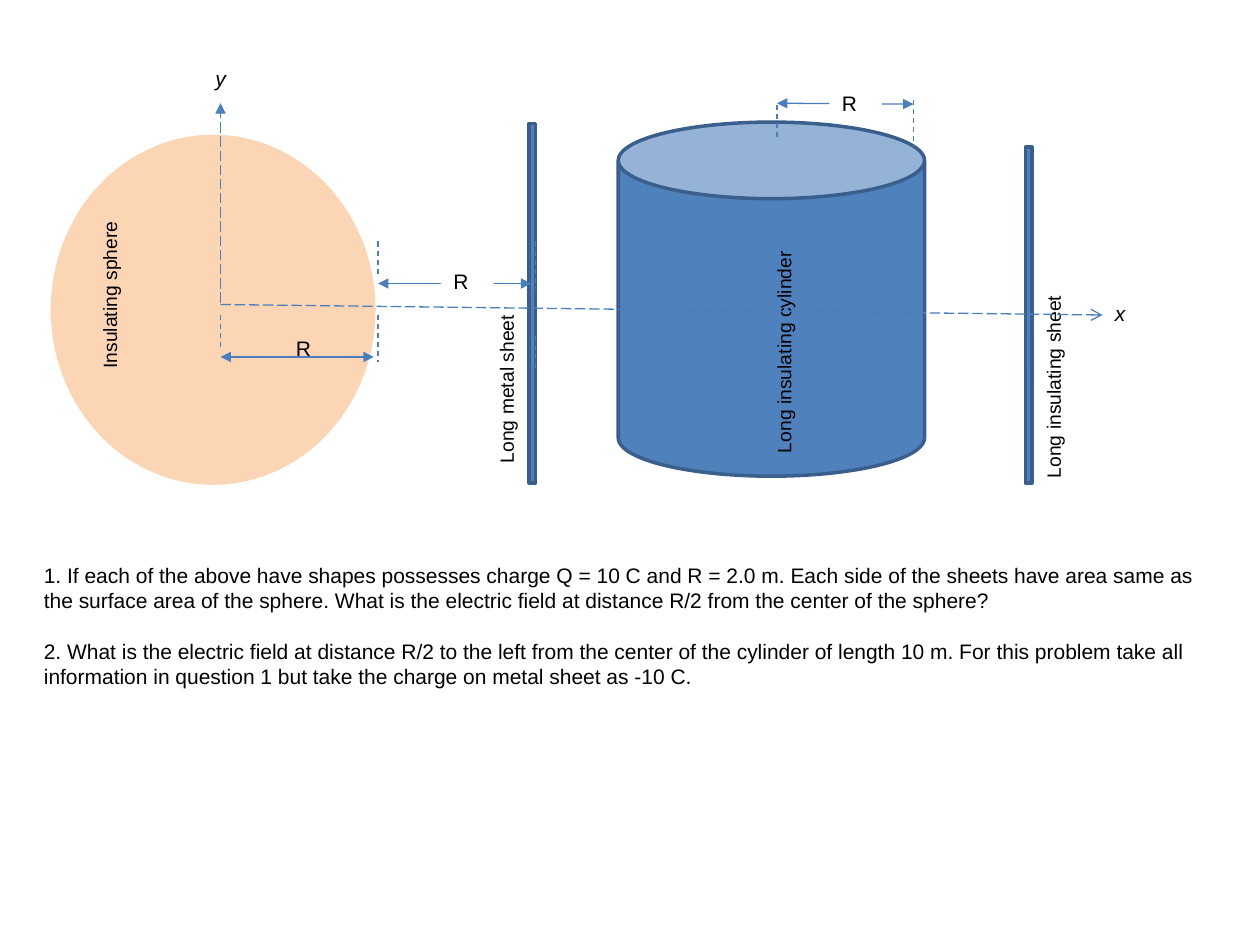
from lxml import etree
from pptx import Presentation
from pptx.dml.color import RGBColor
from pptx.enum import dml, shapes, text
from pptx.oxml import ns
from pptx.util import Pt

THEME = {
    "font": "Arial", "body": 12, "label": 11,
    "text": "000000", "paper": "FFFFFF",
    "blue": "4F81BD", "edge": "3A5F8C", "line": "4B7EBC", "sphere": "FCD5B5",
    "edge_width": 2, "line_width": 0.75,
}
SHAPE = shapes.MSO_SHAPE
DASH = dml.MSO_LINE

# Content: all lengths in points
QUESTIONS = [
    "1. If each of the above have shapes possesses charge Q = 10 C and R = 2.0 m. "
    "Each side of the sheets have area same as the surface area of the sphere. "
    "What is the electric field at distance R/2 from the center of the sphere?",
    "2. What is the electric field at distance R/2 to the left from the center of the "
    "cylinder of length 10 m. For this problem take all information in question 1 "
    "but take the charge on metal sheet as -10 C.",
]
QUESTION_BOX = (18, 318, 684, 80)
QUESTION_GAP = 14.5

# preset, box, fill, edge
BODIES = [
    (SHAPE.RECTANGLE, (302.4, 70.5, 3.6, 205.5), "blue", "edge"),
    (SHAPE.RECTANGLE, (586, 84, 3.6, 192), "blue", "edge"),
    (SHAPE.CAN, (353.3, 69.8, 175, 202.3), "blue", "edge"),
    (SHAPE.OVAL, (30, 78, 183.6, 198), "sphere", "sphere"),
]

# Guide pairs: left x, left top, right x, right top
GUIDES = [
    (306, 192, 396, 192),
    (444, 60, 522, 57),
    (498, 192, 588, 192),
    (126, 180, 216, 180),
    (216, 138, 306, 138),
]
LEFT_GUIDE, RIGHT_GUIDE = 20, 27

# Radius dimensions: start, end, label box, label fill
RADII = [
    ((444, 59), (522, 59.5), (474, 48, 30, 21.8), "paper"),
    ((126, 204), (213.6, 204), (162, 188, 30, 21.8), None),
    ((216, 162), (303.6, 162), (252, 150, 30, 21.8), "paper"),
]

# Axes: start, end, arrowhead, name, name box
AXES = [
    ((126, 174), (630, 180), "arrow", "x", (630, 168, 21, 21.8)),
    ((126, 173), (126, 59), "triangle", "y", (116, 34, 21, 21.8)),
]

# Upright labels: wording, centre x, centre y, length
LABELS = [
    ("Long metal sheet", 289.4, 222, 99.5),
    ("Long insulating sheet", 602, 220.6, 119.5),
    ("Long insulating cylinder", 448, 200.5, 131),
    ("Insulating sphere", 62.7, 168, 99.5),
]
LABEL_HEIGHT = 20.6


def colour(name):
    return RGBColor.from_string(THEME[name])


def add_body(preset, box, fill, edge=None):
    shape = slide.shapes.add_shape(preset, *map(Pt, box))
    shape.shadow.inherit = False
    shape.fill.solid()
    shape.fill.fore_color.rgb = colour(fill)
    if edge:
        shape.line.color.rgb = colour(edge)
        shape.line.width = Pt(THEME["edge_width"])
    else:
        shape.line.fill.background()
    return shape


def add_line(start, end, dash=None, head=None, tail=None):
    line = slide.shapes.add_connector(shapes.MSO_CONNECTOR.STRAIGHT, *map(Pt, start + end))
    line.line.color.rgb = colour("line")
    line.line.width = Pt(THEME["line_width"])
    if dash:
        line.line.dash_style = dash
    outline = line.line._get_or_add_ln()
    for tag, kind in (("a:headEnd", head), ("a:tailEnd", tail)):
        if kind:
            etree.SubElement(outline, ns.qn(tag)).set("type", kind)
    etree.SubElement(outline.getparent(), ns.qn("a:effectLst"))


def add_text(box, wording, size, fill=None, wrap=True, italic=False, gap=0):
    if fill:
        shape = add_body(SHAPE.RECTANGLE, box, fill)
    else:
        shape = slide.shapes.add_textbox(*map(Pt, box))
    frame = shape.text_frame
    frame.text = "\n".join(wording)
    frame.word_wrap = wrap
    frame.auto_size = text.MSO_AUTO_SIZE.SHAPE_TO_FIT_TEXT
    frame.vertical_anchor = text.MSO_ANCHOR.TOP
    for index, paragraph in enumerate(frame.paragraphs):
        paragraph.alignment = text.PP_ALIGN.LEFT
        paragraph.space_before = Pt(gap if index else 0)
        for run in paragraph.runs:
            run.font.name = THEME["font"]
            run.font.size = Pt(THEME[size])
            run.font.italic = italic
            run.font.color.rgb = colour("text")
    return shape


presentation = Presentation()
presentation.slide_width, presentation.slide_height = Pt(720), Pt(540)
slide = presentation.slides.add_slide(presentation.slide_layouts[6])

# Questions
add_text(QUESTION_BOX, QUESTIONS, "body", gap=QUESTION_GAP)

# Charged bodies
for body in BODIES:
    add_body(*body)

# Dashed guides
for left, left_top, right, right_top in GUIDES:
    add_line((left, left_top), (left, left_top + LEFT_GUIDE), DASH.DASH)
    add_line((right, right_top), (right, right_top + RIGHT_GUIDE), DASH.DASH)

# Radius dimensions
for start, end, box, fill in RADII:
    add_line(start, end, head="triangle", tail="triangle")
    add_text(box, ["R"], "body", fill)

# Upright labels, turned about their centres
for wording, x, y, length in LABELS:
    box = (x - length / 2, y - LABEL_HEIGHT / 2, length, LABEL_HEIGHT)
    add_text(box, [wording], "label", wrap=False).rotation = 270

# Axes
for start, end, arrowhead, name, box in AXES:
    add_line(start, end, DASH.LONG_DASH, tail=arrowhead)
    add_text(box, [name], "body", wrap=False, italic=True)

presentation.save("out.pptx")
